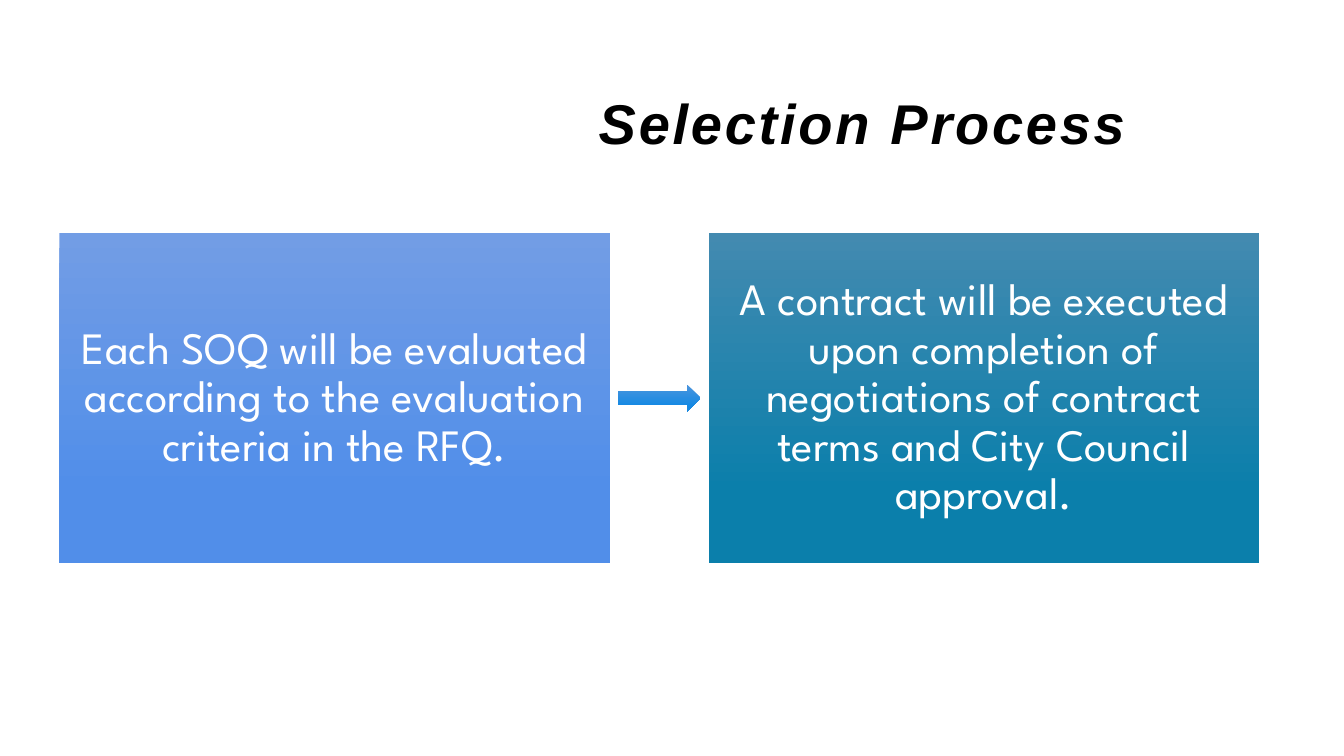
from dataclasses import dataclass

from pptx import Presentation
from pptx.dml.color import RGBColor
from pptx.enum.shapes import MSO_SHAPE as Preset
from pptx.enum.text import MSO_ANCHOR as Anchor
from pptx.enum.text import MSO_AUTO_SIZE as AutoSize
from pptx.enum.text import PP_ALIGN as Align
from pptx.shapes.autoshape import Shape
from pptx.slide import Slide
from pptx.util import Inches, Pt

SLIDE_WIDTH, SLIDE_HEIGHT = Inches(13.33), Inches(7.5)
COLUMNS, ROWS = 120, 75
MARGIN, STEP_WIDTH, GAP = 5.31, 49.15, 8.82
STEP_TOP, STEP_HEIGHT = 23.1, 32.8
ARROW_WIDTH, ARROW_HEIGHT = 7.38, 2.7


@dataclass(frozen=True)
class Area:
    column: float
    row: float
    columns: float
    rows: float

    def place(self) -> tuple[int, int, int, int]:
        return (
            round(SLIDE_WIDTH * self.column / COLUMNS),
            round(SLIDE_HEIGHT * self.row / ROWS),
            round(SLIDE_WIDTH * self.columns / COLUMNS),
            round(SLIDE_HEIGHT * self.rows / ROWS),
        )


@dataclass(frozen=True)
class Step:
    text: str
    top_colour: str
    bottom_colour: str


STEPS = [
    Step("Each SOQ will be evaluated according to the evaluation criteria in the RFQ.",
         "729DE5", "518EE9"),
    Step("A contract will be executed upon completion of negotiations of contract "
         "terms and City Council approval.", "438AB0", "0B7FAB"),
]


def colour(value: str) -> RGBColor:
    return RGBColor.from_string(value)


def add_gradient_shape(page: Slide, preset: Preset, area: Area, top: str, bottom: str) -> Shape:
    shape = page.shapes.add_shape(preset, *area.place())
    shape.shadow.inherit = False
    shape.line.fill.background()
    shape.fill.gradient()
    shape.fill.gradient_angle = 270
    for stop, position, value in zip(shape.fill.gradient_stops, (0, 0.78), (top, bottom)):
        stop.position = position
        stop.color.rgb = colour(value)
    return shape


def add_step(page: Slide, step: Step, column: float) -> None:
    area = Area(column, STEP_TOP, STEP_WIDTH, STEP_HEIGHT)
    box = add_gradient_shape(page, Preset.RECTANGLE, area, step.top_colour, step.bottom_colour)
    frame = box.text_frame
    frame.word_wrap = True
    frame.vertical_anchor = Anchor.MIDDLE
    frame.margin_left = frame.margin_right = Inches(0.17)
    frame.margin_top = frame.margin_bottom = Inches(0.17)
    para = frame.paragraphs[0]
    para.alignment = Align.CENTER
    para.line_spacing = 0.9
    span = para.add_run()
    span.text = step.text
    span.font.name = "League Spartan"
    span.font.size = Pt(32)
    span.font.color.rgb = colour("FFFFFF")


def add_arrow(page: Slide, column: float) -> None:
    area = Area(column + (GAP - ARROW_WIDTH) / 2, STEP_TOP + (STEP_HEIGHT - ARROW_HEIGHT) / 2,
                ARROW_WIDTH, ARROW_HEIGHT)
    add_gradient_shape(page, Preset.RIGHT_ARROW, area, "4D95DD", "1589E3")


def add_title(page: Slide, text: str, area: Area) -> None:
    frame = page.shapes.add_textbox(*area.place()).text_frame
    frame.word_wrap = True
    frame.auto_size = AutoSize.SHAPE_TO_FIT_TEXT
    para = frame.paragraphs[0]
    para.space_after = Pt(6)
    span = para.add_run()
    span.text = text
    span.font.name = "Arial"
    span.font.size = Pt(40)
    span.font.bold = span.font.italic = True
    span.font.color.rgb = colour("000000")
    span.font._element.set("spc", "200")


def main() -> None:
    deck = Presentation()
    deck.slide_width, deck.slide_height = SLIDE_WIDTH, SLIDE_HEIGHT
    page = deck.slides.add_slide(deck.slide_layouts[6])
    for index, step in enumerate(STEPS):
        column = MARGIN + index * (STEP_WIDTH + GAP)
        if index:
            add_arrow(page, column - GAP)
        add_step(page, step, column)
    add_title(page, "Selection Process", Area(52.57, 8.3, 59.95, 7.7))
    deck.save("out.pptx")


if __name__ == "__main__":
    main()
